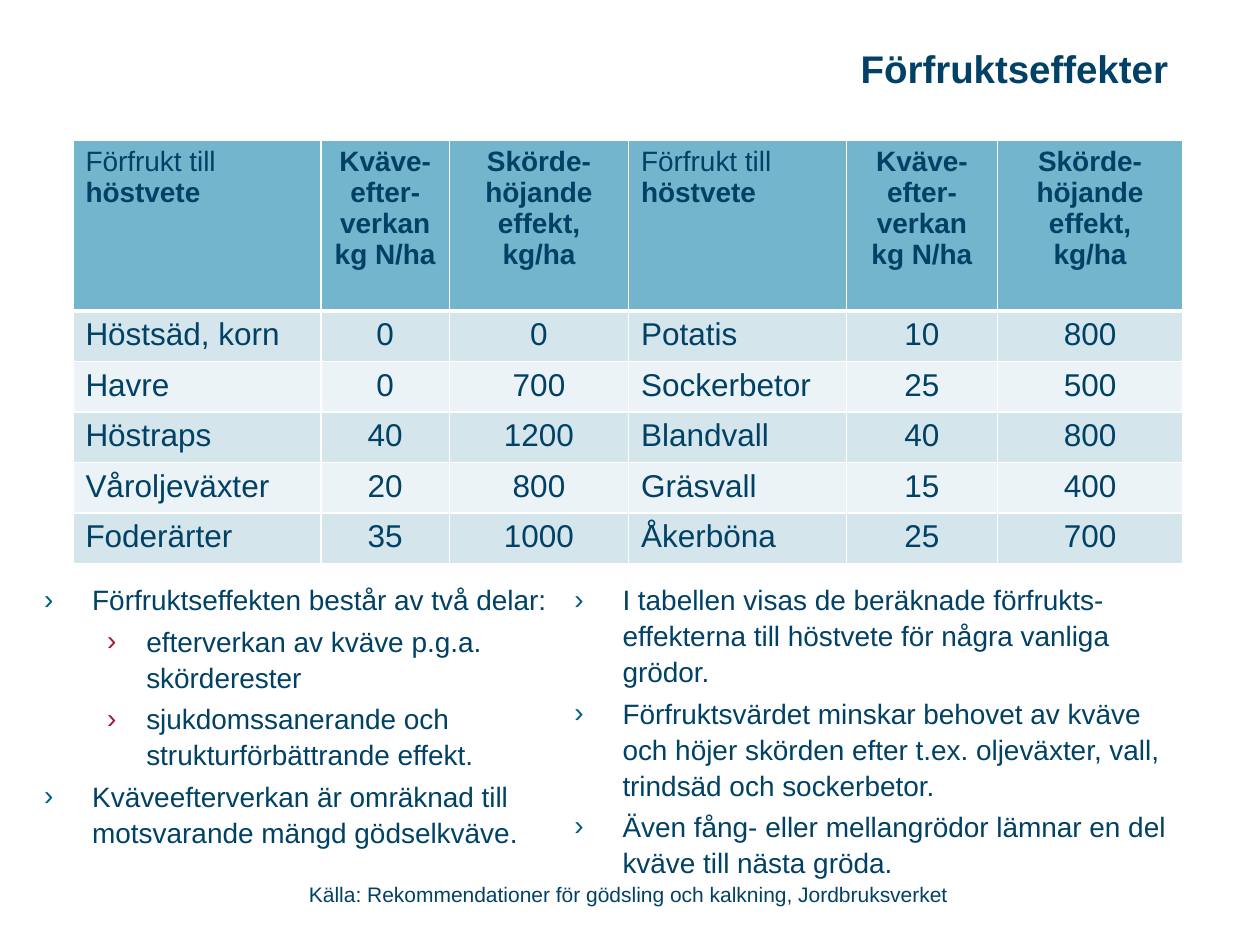
from lxml import etree
from pptx import Presentation, util as u
from pptx.dml.color import RGBColor
from pptx.enum import text as t
from pptx.oxml import ns

INK, DEEP, BLUE, RED = "004165", "004266", "005C84", "A71930"
HEAD, ODD, EVEN, WHITE = "72B5CC", "D5E5EC", "EBF3F6", "FFFFFF"
LEFT, MID, RIGHT = t.PP_ALIGN.LEFT, t.PP_ALIGN.CENTER, t.PP_ALIGN.RIGHT

TITLE = "Förfruktseffekter"
SOURCE = "Källa: Rekommendationer för gödsling och kalkning, Jordbruksverket"
TOP = [
    [[("Förfrukt till ", False), ("höstvete", True)]],
    [[("Kväve-efter-verkan", True)], [("kg N/ha", True)]],
    [[("Skörde-höjande effekt, kg/ha", True)]],
] * 2
ROWS = [
    ("Höstsäd, korn", "0", "0", "Potatis", "10", "800"),
    ("Havre", "0", "700", "Sockerbetor", "25", "500"),
    ("Höstraps", "40", "1200", "Blandvall", "40", "800"),
    ("Våroljeväxter", "20", "800", "Gräsvall", "15", "400"),
    ("Foderärter", "35", "1000", "Åkerböna", "25", "700"),
]
COLS = [5, 2.59, 3.61, 4.39, 3.05, 3.73]
HIGH = [3.45] + [0.97] * len(ROWS)
LISTS = [
    ((0.64, 11.58, 10.8, 5.79), [
        (0, [("Förfruktseffekten består av två delar:", INK)]),
        (1, [("efterverkan av kväve p.g.a. skörderester", INK)]),
        (1, [("sjukdomssanerande och strukturförbättrande effekt.", INK)]),
        (0, [("Kväveefterverkan är omräknad till motsvarande mängd gödselkväve", DEEP),
             (".", INK)]),
    ]),
    ((11.33, 11.58, 12.8, 6.02), [
        (0, [("I tabellen visas de beräknade förfrukts-effekterna till höstvete "
              "för några vanliga grödor.", INK)]),
        (0, [("Förfruktsvärdet minskar behovet av kväve ", INK),
             ("och höjer skörden efter t.ex. oljeväxter, vall, trindsäd och "
              "sockerbetor.", DEEP)]),
        (0, [("Även fång- ", DEEP),
             ("eller mellangrödor lämnar en del kväve till nästa gröda.", INK)]),
    ]),
]
LEVELS = [(0.97, -0.97, BLUE), (2.06, -0.79, RED)]


def color(code):
    return RGBColor.from_string(code)


def add_run(para, words, size, code=INK, bold=False):
    run = para.add_run()
    run.text = words
    form = {"name": "Arial", "size": u.Pt(size), "bold": bold}
    for key, val in form.items():
        setattr(run.font, key, val)
    run.font.color.rgb = color(code)


def get_para(frame, num):
    return frame.add_paragraph() if num else frame.paragraphs[0]


def add_box(slide, place):
    frame = slide.shapes.add_textbox(*map(u.Cm, place)).text_frame
    frame.word_wrap = True
    return frame


def add_line(slide, place, words, size, align, bold=False):
    frame = add_box(slide, place)
    frame.vertical_anchor = t.MSO_ANCHOR.MIDDLE
    para = frame.paragraphs[0]
    para.alignment = align
    add_run(para, words, size, bold=bold)


def add_tag(node, name, **vals):
    return etree.SubElement(node, ns.qn("a:" + name), vals)


def add_edges(cell, row):
    props = cell._tc.get_or_add_tcPr()
    wide = {"T": 3 if row == 1 else 1, "B": 3 if row == 0 else 1}
    for side in "LRTB":
        line = add_tag(props, "ln" + side, w=str(u.Pt(wide.get(side, 1))))
        add_tag(add_tag(line, "solidFill"), "srgbClr", val=WHITE)


def add_grid(slide):
    place = (1.47, 2.82, sum(COLS), sum(HIGH))
    grid = slide.shapes.add_table(len(HIGH), len(COLS), *map(u.Cm, place)).table
    for col, wide in zip(grid.columns, COLS):
        col.width = u.Cm(wide)
    body = [[[[(word, False)]] for word in row] for row in ROWS]
    for r, row in enumerate([TOP] + body):
        grid.rows[r].height = u.Cm(HIGH[r])
        for c, paras in enumerate(row):
            cell = grid.cell(r, c)
            add_edges(cell, r)
            cell.fill.solid()
            cell.fill.fore_color.rgb = color((ODD if r % 2 else EVEN) if r else HEAD)
            for num, runs in enumerate(paras):
                para = get_para(cell.text_frame, num)
                para.alignment = MID if c % 3 else LEFT
                for words, bold in runs:
                    add_run(para, words, 18 if r else 16, bold=bold)


def add_list(slide, place, items):
    frame = add_box(slide, place)
    for num, (level, runs) in enumerate(items):
        para = get_para(frame, num)
        edge, hang, tint = LEVELS[level]
        props = para._p.get_or_add_pPr()
        props.set("marL", str(u.Cm(edge)))
        props.set("indent", str(u.Cm(hang)))
        add_tag(add_tag(props, "buClr"), "srgbClr", val=tint)
        add_tag(props, "buFont", typeface="Arial")
        add_tag(props, "buChar", char="›")
        form = {"level": level, "line_spacing": 1.07,
                "space_before": u.Pt(3.2 if num else 0)}
        for key, val in form.items():
            setattr(para, key, val)
        for words, code in runs:
            add_run(para, words, 16, code)


def main():
    deck = Presentation()
    deck.slide_width, deck.slide_height = u.Cm(25.4), u.Cm(19.05)
    slide = deck.slides.add_slide(deck.slide_layouts[6])
    add_line(slide, (1.4, 0.63, 22.4, 1.5), TITLE, 22, RIGHT, True)
    add_grid(slide)
    for place, items in LISTS:
        add_list(slide, place, items)
    add_line(slide, (4.32, 17.63, 16.71, 0.79), SOURCE, 12, MID)
    deck.save("out.pptx")


if __name__ == "__main__":
    main()
